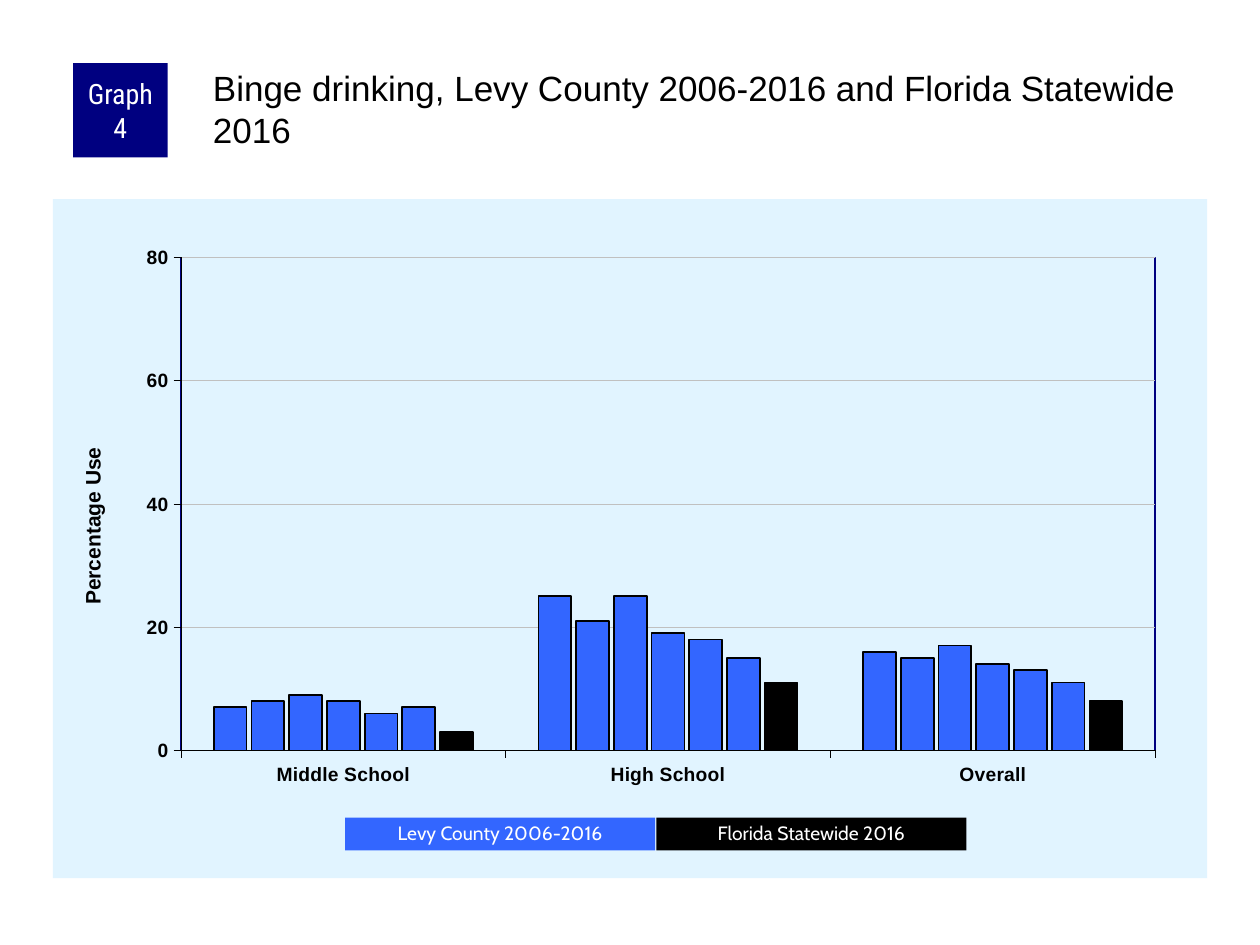
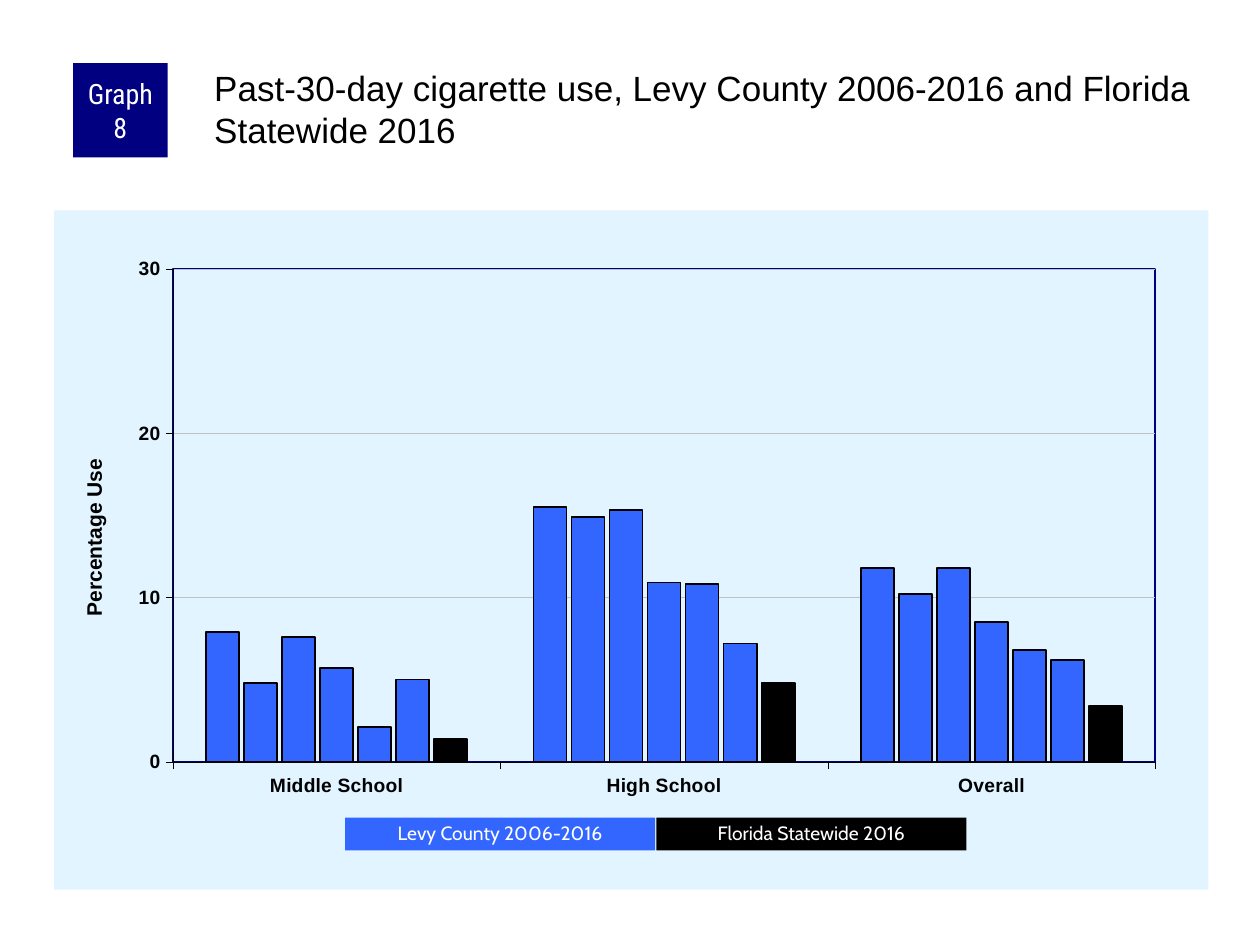
from lxml import etree
from pptx import Presentation
from pptx import util as u
from pptx.chart.data import CategoryChartData
from pptx.dml.color import RGBColor
from pptx.enum import chart as charts, shapes, text
from pptx.oxml import parse_xml
from pptx.oxml.ns import nsdecls, qn

NAVY, BLUE, BLACK, WHITE = "000080", "3366FF", "000000", "FFFFFF"
PANEL, GRID = "E1F4FF", "C0C0C0"
Inches, Pt = u.Inches, u.Pt

CATEGORIES = ["Middle School", "High School", "Overall"]
LEGEND = [("Levy County 2006-2016", BLUE), ("Florida Statewide 2016", BLACK)]

# One row per series; the last row is the statewide figure.
GRAPHS = [
    dict(number=4, topic="Binge drinking", left=0.42, top=1.58,
         plot_x=0.111, plot_w=0.844, maximum=80, step=20,
         rows=[(7, 25, 16), (8, 21, 15), (9, 25, 17), (8, 19, 14),
               (6, 18, 13), (7, 15, 11), (3, 11, 8)]),
    dict(number=8, topic="Past-30-day cigarette use", left=0.43, top=1.67,
         plot_x=0.103, plot_w=0.851, maximum=30, step=10,
         rows=[(7.9, 15.5, 11.8), (4.8, 14.9, 10.2), (7.6, 15.3, 11.8),
               (5.7, 10.9, 8.5), (2.1, 10.8, 6.8), (5, 7.2, 6.2),
               (1.4, 4.8, 3.4)]),
]


def color(value):
    """Turn a hex string into a colour."""
    return RGBColor.from_string(value)


def add_label(page, place, fill, words, font, size, spacing):
    """Add a filled rectangle with centred white text and return its frame."""
    box = page.shapes.add_shape(shapes.MSO_SHAPE.RECTANGLE, *map(Inches, place))
    box.shadow.inherit = False
    box.fill.solid()
    box.fill.fore_color.rgb = color(fill)
    box.line.fill.background()
    frame = box.text_frame
    frame.word_wrap = True
    frame.vertical_anchor = text.MSO_ANCHOR.MIDDLE
    para = frame.paragraphs[0]
    para.alignment = text.PP_ALIGN.CENTER
    para.line_spacing = spacing
    span = para.add_run()
    span.text = words
    span.font.name = font
    span.font.size = Pt(size)
    span.font.color.rgb = color(WHITE)
    return frame


deck = Presentation()
deck.slide_width, deck.slide_height = Inches(10), Inches(7.5)

for graph in GRAPHS:
    page = deck.slides.add_slide(deck.slide_layouts[5])

    # Title
    title = page.shapes.title
    title.left, title.top = Inches(graph["left"] + 1.24), Inches(0.5)
    title.width, title.height = Inches(7.92), Inches(0.83)
    frame = title.text_frame
    frame.word_wrap = True
    frame.auto_size = text.MSO_AUTO_SIZE.NONE
    frame.vertical_anchor = text.MSO_ANCHOR.TOP
    frame.margin_left = frame.margin_top = Inches(0.03)
    frame.margin_right = frame.margin_bottom = 0
    para = frame.paragraphs[0]
    para.alignment = text.PP_ALIGN.LEFT
    span = para.add_run()
    span.text = graph["topic"] + ", Levy County 2006-2016 and Florida Statewide 2016"
    span.font.name = "Arial"
    span.font.size = Pt(20)
    span.font.color.rgb = color(BLACK)

    # Chart
    data = CategoryChartData()
    data.categories = CATEGORIES
    for number, row in enumerate(graph["rows"], 1):
        data.add_series(f"Series {number}", row)
    chart = page.shapes.add_chart(
        charts.XL_CHART_TYPE.COLUMN_CLUSTERED, Inches(graph["left"]),
        Inches(graph["top"]), Inches(9.16), Inches(5.39), data).chart
    chart.has_title = chart.has_legend = False
    chart.font.name = "Arial"
    chart.font.size = Pt(8)
    chart.font.color.rgb = color(BLACK)

    bars = chart.plots[0]
    bars.gap_width, bars.overlap = 200, -15
    bars.vary_by_categories = False
    for series in bars.series:
        series.invert_if_negative = False
        series.format.fill.solid()
        series.format.fill.fore_color.rgb = color(BLUE)
        series.format.line.color.rgb = color(BLACK)
        series.format.line.width = Pt(1)
    series.format.fill.fore_color.rgb = color(BLACK)

    values = chart.value_axis
    for axis in (chart.category_axis, values):
        axis.major_tick_mark = charts.XL_TICK_MARK.OUTSIDE
        axis.minor_tick_mark = charts.XL_TICK_MARK.NONE
        axis.format.line.color.rgb = color(BLACK)
        axis.format.line.width = Pt(0.25)
        font = axis.tick_labels.font
        font.name, font.size, font.bold = "Arial", Pt(11), True
        font.color.rgb = color(BLACK)
    values.minimum_scale, values.maximum_scale = 0, graph["maximum"]
    values.major_unit = graph["step"]
    values.has_major_gridlines = True
    values.major_gridlines.format.line.color.rgb = color(GRID)
    values.major_gridlines.format.line.width = Pt(0.25)
    span = values.axis_title.text_frame.paragraphs[0].add_run()
    span.text = "Percentage Use"
    span.font.name, span.font.size, span.font.bold = "Arial", Pt(12), True
    span.font.color.rgb = color(BLACK)

    # Fixed places of the plot and the axis title
    space = chart._chartSpace
    plot_area = space.find(".//" + qn("c:plotArea"))
    axis_title = values.axis_title._element
    plot_layout = dict(layoutTarget="inner", xMode="edge", yMode="edge",
                       x=graph["plot_x"], y=0.086, w=graph["plot_w"], h=0.726)
    title_layout = dict(xMode="edge", yMode="edge", x=0.02, y=0.36)
    for parent, index, settings in ((plot_area, 0, plot_layout),
                                    (axis_title, 1, title_layout)):
        for old in parent.findall(qn("c:layout")):
            parent.remove(old)
        layout = parse_xml(f"<c:layout {nsdecls('c')}><c:manualLayout/></c:layout>")
        for name, setting in settings.items():
            etree.SubElement(layout[0], qn("c:" + name)).set("val", str(setting))
        parent.insert(index, layout)

    # Panel fill and plot frame
    names = nsdecls("c", "a")
    space.find(qn("c:chart")).addnext(parse_xml(
        f'<c:spPr {names}><a:solidFill><a:srgbClr val="{PANEL}"/></a:solidFill>'
        '<a:ln><a:noFill/></a:ln></c:spPr>'))
    plot_area.append(parse_xml(
        f'<c:spPr {names}><a:noFill/><a:ln w="{Pt(1)}"><a:solidFill>'
        f'<a:srgbClr val="{NAVY}"/></a:solidFill></a:ln></c:spPr>'))

    # Graph number and legend
    frame = add_label(page, (0.58, 0.5, 0.75, 0.75), NAVY,
                      f"Graph {graph['number']}", "Roboto Condensed", 16, 1.0)
    frame.margin_left = frame.margin_right = Inches(0.05)
    frame.margin_top = frame.margin_bottom = 0
    for index, (words, fill) in enumerate(LEGEND):
        add_label(page, (2.74 + 2.47 * index, 6.49, 2.46, 0.26), fill,
                  words, "Cabin", 11, 0.9)

deck.save("out.pptx")
